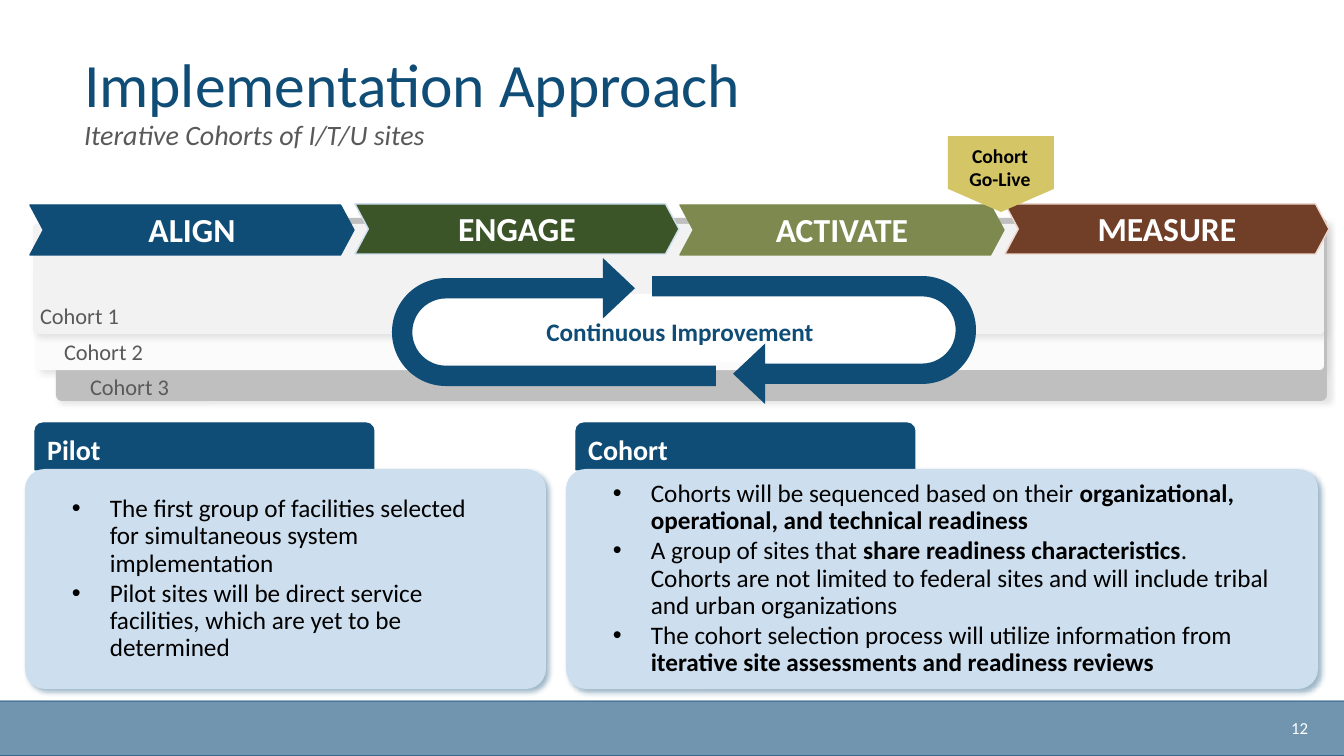
import pptx
import pptx.util
import pptx.dml.color
import pptx.enum.shapes
import pptx.enum.text
import pptx.oxml
import pptx.oxml.ns
from lxml import etree

SHAPE = pptx.enum.shapes.MSO_SHAPE
ALIGN = pptx.enum.text.PP_ALIGN
ANCHOR = pptx.enum.text.MSO_ANCHOR

PX = 914400 / 100.8
FONT = "Calibri"
COLORS = {
    "navy": "0F4C76", "green": "3B5529", "olive": "7D894F", "rust": "713E28",
    "gold": "D4C566", "pale_blue": "CDDEEE", "pale_rust": "ECD5CA",
    "white": "FFFFFF", "black": "000000", "text_gray": "595959",
    "gray": "BFBFBF", "near_white": "FBFBFB", "light_gray": "F2F2F2",
}
TITLE = "Implementation Approach"
SUBTITLE = "Iterative Cohorts of I/T/U sites"
PAGE_NUMBER = "12"

COHORT_LAYERS = [
    ((56, 218, 1271, 183), "gray"),
    ((36, 231, 1288, 139), "near_white"),
    ((33, 224, 1291, 110), "light_gray"),
]
COHORT_LABELS = [("Cohort 1", 9, 316), ("Cohort 2", 33, 352), ("Cohort 3", 59, 387)]
PHASES = [
    ("ALIGN", "navy", "navy", 205),
    ("ENGAGE", "green", "pale_blue", 204),
    ("ACTIVATE", "olive", "olive", 205),
    ("MEASURE", "rust", "pale_rust", 204),
]
PHASE_LEFT, PHASE_STEP, PHASE_WIDTH, PHASE_HEIGHT = 30, 325, 324, 50
LOOP_ARROWS = [((750, 178, 128, 324), 90), ((490, 160, 128, 324), 270)]
LOOP_ADJUSTMENTS = [0.159, 0.236, 0.25, 0.45, 0.75]
PANELS = [
    ("Pilot", 25, 521, [
        [("The first group of facilities selected for simultaneous system implementation", False)],
        [("Pilot sites will be direct service facilities, which are yet to be determined", False)],
    ]),
    ("Cohort", 566, 752, [
        [("Cohorts will be sequenced based on their ", False),
         ("organizational, operational, and technical readiness", True)],
        [("A group of sites that ", False),
         ("share readiness characteristics", True),
         (". Cohorts are not limited to federal sites and will include tribal and urban organizations", False)],
        [("The cohort selection process will utilize information from", False),
         (" iterative site assessments and readiness reviews", True)],
    ]),
]

presentation = pptx.Presentation()


def px(value):
    return pptx.util.Emu(round(value * PX))


def color(name):
    return pptx.dml.color.RGBColor.from_string(COLORS[name])


def add_shape(kind, box, fill, line=None, line_width=1, adjustments=(), rotation=0):
    shape = slide.shapes.add_shape(kind, *map(px, box))
    shape.shadow.inherit = False
    shape.fill.solid()
    shape.fill.fore_color.rgb = color(fill)
    if line:
        shape.line.color.rgb = color(line)
        shape.line.width = pptx.util.Pt(line_width)
    else:
        shape.line.fill.background()
    for index, adjustment in enumerate(adjustments):
        shape.adjustments[index] = adjustment
    shape.rotation = rotation
    return shape


def add_shadow(shape, name):
    effects = shape._element.spPr.find(pptx.oxml.ns.qn("a:effectLst"))
    effects.append(pptx.oxml.parse_xml(
        f'<a:outerShdw {pptx.oxml.ns.nsdecls("a")} blurRad="50800" dist="38100" '
        f'dir="2700000" algn="tl" rotWithShape="0"><a:srgbClr val="{COLORS[name]}">'
        '<a:alpha val="40000"/></a:srgbClr></a:outerShdw>'))


def set_transparency(color_format_parent):
    for element in color_format_parent.iter(pptx.oxml.ns.qn("a:srgbClr")):
        etree.SubElement(element, pptx.oxml.ns.qn("a:alpha"), val="59000")


def set_frame(shape, insets=(10, 5, 10, 5), anchor=ANCHOR.MIDDLE):
    frame = shape.text_frame
    frame.word_wrap = True
    frame.vertical_anchor = anchor
    frame.margin_left, frame.margin_top, frame.margin_right, frame.margin_bottom = map(px, insets)
    return frame


def style(paragraph, size, name, align=ALIGN.LEFT, bold=None, italic=None):
    paragraph.alignment = align
    font = paragraph.font
    font.name, font.size, font.bold, font.italic = FONT, pptx.util.Pt(size), bold, italic
    font.color.rgb = color(name)


def write(shape, lines, size, name, align=ALIGN.CENTER, insets=(2, 2, 2, 2), spacing=None, **weight):
    frame = set_frame(shape, insets)
    for index, line in enumerate(lines):
        paragraph = frame.add_paragraph() if index else frame.paragraphs[0]
        paragraph.text = line
        paragraph.line_spacing = spacing
        style(paragraph, size, name, align, **weight)


def add_text(box, lines, size, name, **options):
    write(slide.shapes.add_textbox(*map(px, box)), lines, size, name, **options)


def add_bullets(shape, items):
    frame = set_frame(shape, (41, 5, 41, 5))
    for index, runs in enumerate(items):
        paragraph = frame.add_paragraph() if index else frame.paragraphs[0]
        properties = paragraph._p.get_or_add_pPr()
        properties.set("marL", str(px(38)))
        properties.set("indent", str(-px(38)))
        paragraph.line_spacing = 0.9
        paragraph.space_before = pptx.util.Pt(2 if index else 0)
        bullet_font = etree.SubElement(properties, pptx.oxml.ns.qn("a:buFont"))
        bullet_font.set("typeface", "Arial")
        bullet = etree.SubElement(properties, pptx.oxml.ns.qn("a:buChar"))
        bullet.set("char", "•")
        style(paragraph, 18, "black")
        for text, bold in runs:
            run = paragraph.add_run()
            run.text = text
            run.font.bold = bold


presentation.slide_width, presentation.slide_height = px(1344), px(756)
slide = presentation.slides.add_slide(presentation.slide_layouts[5])

footer = add_shape(SHAPE.RECTANGLE, (-1, 701, 1346, 55), "navy", "navy")
set_transparency(footer._element.spPr)
add_text((1174, 708, 144, 40), [PAGE_NUMBER], 12, "white", align=ALIGN.RIGHT, insets=(10, 5, 10, 5))

title = slide.shapes.title
title.left, title.top, title.width, title.height = map(px, (74, 48, 1196, 79))
write(title, [TITLE], 44, "navy", align=ALIGN.LEFT, insets=(10, 5, 10, 5), spacing=0.9)
add_text((74, 116, 1196, 40), [SUBTITLE], 20, "text_gray", align=ALIGN.LEFT,
         insets=(10, 5, 10, 5), spacing=0.9, italic=True)

for box, fill in COHORT_LAYERS:
    add_shadow(add_shape(SHAPE.ROUNDED_RECTANGLE, box, fill, adjustments=[0.032]), "gray")
for label, left, middle in COHORT_LABELS:
    add_text((left, middle - 16, 141, 32), [label], 16, "text_gray")

for index, (label, fill, line, top) in enumerate(PHASES):
    box = (PHASE_LEFT + index * PHASE_STEP, top, PHASE_WIDTH, PHASE_HEIGHT)
    phase = add_shape(SHAPE.CHEVRON, box, fill, line, adjustments=[0.268])
    write(phase, [label], 24, "white", insets=(8, 8, 8, 5), spacing=0.9, bold=True)

add_shape(SHAPE.PENTAGON, (963, 121, 76, 106), "gold", adjustments=[0.304], rotation=90)
add_text((920, 141, 160, 52), ["Cohort", "Go-Live"], 14, "black", bold=True)

for heading, left, width, items in PANELS:
    tab = add_shape(SHAPE.ROUND_2_SAME_RECTANGLE, (left + 10, 423, 339, 47), "navy", "navy", 0.75)
    write(tab, [heading], 20, "white", align=ALIGN.LEFT, insets=(10, 7, 10, 3), bold=True)
    panel = add_shape(SHAPE.ROUNDED_RECTANGLE, (left, 469, width, 220), "pale_blue", adjustments=[0.091])
    add_shadow(panel, "navy")
    add_bullets(panel, items)

add_shape(SHAPE.ROUNDED_RECTANGLE, (401, 294, 565, 68), "white", adjustments=[0.271])
add_text((385, 306, 590, 50), ["Continuous Improvement"], 18, "navy", bold=True)
for box, rotation in LOOP_ARROWS:
    add_shape(SHAPE.U_TURN_ARROW, box, "navy", adjustments=LOOP_ADJUSTMENTS, rotation=rotation)

presentation.save("out.pptx")
